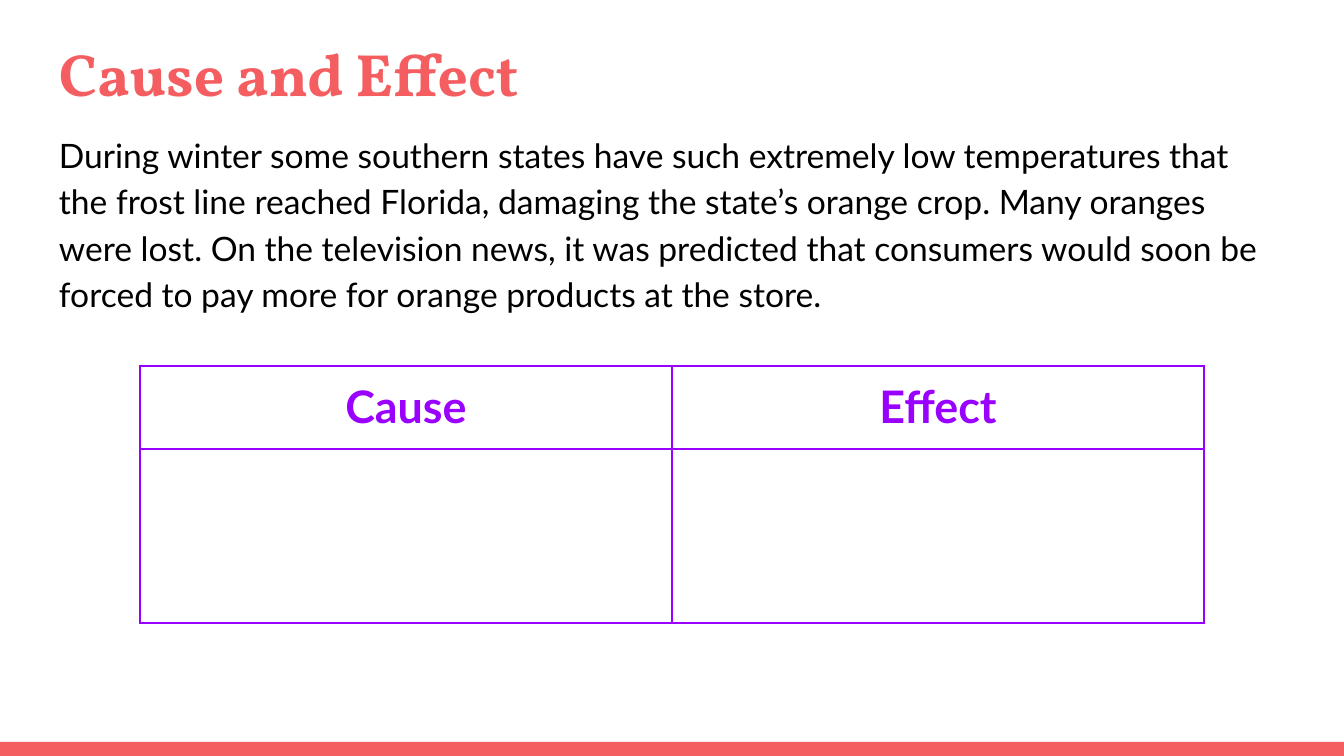
from lxml import etree
from pptx import Presentation
from pptx.dml.color import RGBColor
from pptx.enum.shapes import MSO_SHAPE
from pptx.enum.text import MSO_ANCHOR, MSO_AUTO_SIZE, PP_ALIGN
from pptx.oxml.ns import qn
from pptx.util import Emu, Pt

RECT = MSO_SHAPE.RECTANGLE
TOP, MIDDLE = MSO_ANCHOR.TOP, MSO_ANCHOR.MIDDLE
LEFT, CENTER = PP_ALIGN.LEFT, PP_ALIGN.CENTER
FIXED = MSO_AUTO_SIZE.NONE
SCALE = 914400 / 134.4
COLORS = {"coral": "F55E61", "purple": "9900FF", "black": "000000"}
PAD = 13


def px(count):
    return Emu(round(count * SCALE))


def write(frame, text, face, size, color, bold=False, align=LEFT):
    """Fill a text frame or cell frame with one styled paragraph."""
    frame.word_wrap = True
    para = frame.paragraphs[0]
    para.text = text
    para.alignment = align
    font = para.font
    font.name, font.size, font.bold = face, Pt(size), bold
    font.color.rgb = RGBColor.from_string(COLORS[color])
    return para


deck = Presentation()
deck.slide_width, deck.slide_height = px(1344), px(756)
slide = deck.slides.add_slide(deck.slide_layouts[5])
shapes = slide.shapes

# Footer band
band = shapes.add_shape(RECT, 0, px(742), px(1344), px(14))
band.shadow.inherit = False
band.fill.solid()
band.fill.fore_color.rgb = RGBColor.from_string(COLORS["coral"])
band.line.fill.background()

# Title and passage
title = shapes.title
title.left, title.top, title.width, title.height = px(46), px(24), px(1252), px(92)
passage = shapes.add_textbox(px(46), px(116), px(1252), px(326))
for box in (title, passage):
    frame = box.text_frame
    frame.auto_size = FIXED
    frame.vertical_anchor = TOP
    frame.margin_left = frame.margin_right = px(PAD)
    frame.margin_top = frame.margin_bottom = px(PAD)

write(title.text_frame, "Cause and Effect", "Vollkorn", 32, "coral", True)
story = (
    "During winter some southern states have such extremely low temperatures "
    "that the frost line reached Florida, damaging the state’s orange crop. "
    "Many oranges were lost. On the television news, it was predicted that "
    "consumers would soon be forced to pay more for orange products at the store."
)
write(passage.text_frame, story, "Lato", 18, "black").line_spacing = 1.15

# Cause and effect table
heads = ("Cause", "Effect")
rows = (83, 174)
table = shapes.add_table(2, 2, px(140), px(366), px(1064), px(sum(rows))).table
table.first_row = table.horz_banding = False
for row, height in zip(table.rows, rows):
    row.height = px(height)
for col, head in zip(table.columns, heads):
    col.width = px(532)
for cell, head in zip(table.rows[0].cells, heads):
    write(cell.text_frame, head, "Lato", 24, "purple", True, CENTER)

for cell in table.iter_cells():
    cell.margin_left = cell.margin_right = px(PAD)
    cell.margin_top = cell.margin_bottom = px(PAD)
    props = cell._tc.get_or_add_tcPr()
    for side in ("lnL", "lnR", "lnT", "lnB"):
        edge = etree.SubElement(props, qn(f"a:{side}"), w=str(Pt(1.5)))
        fill = etree.SubElement(edge, qn("a:solidFill"))
        etree.SubElement(fill, qn("a:srgbClr"), val=COLORS["purple"])
    cell.fill.background()

deck.save("out.pptx")
